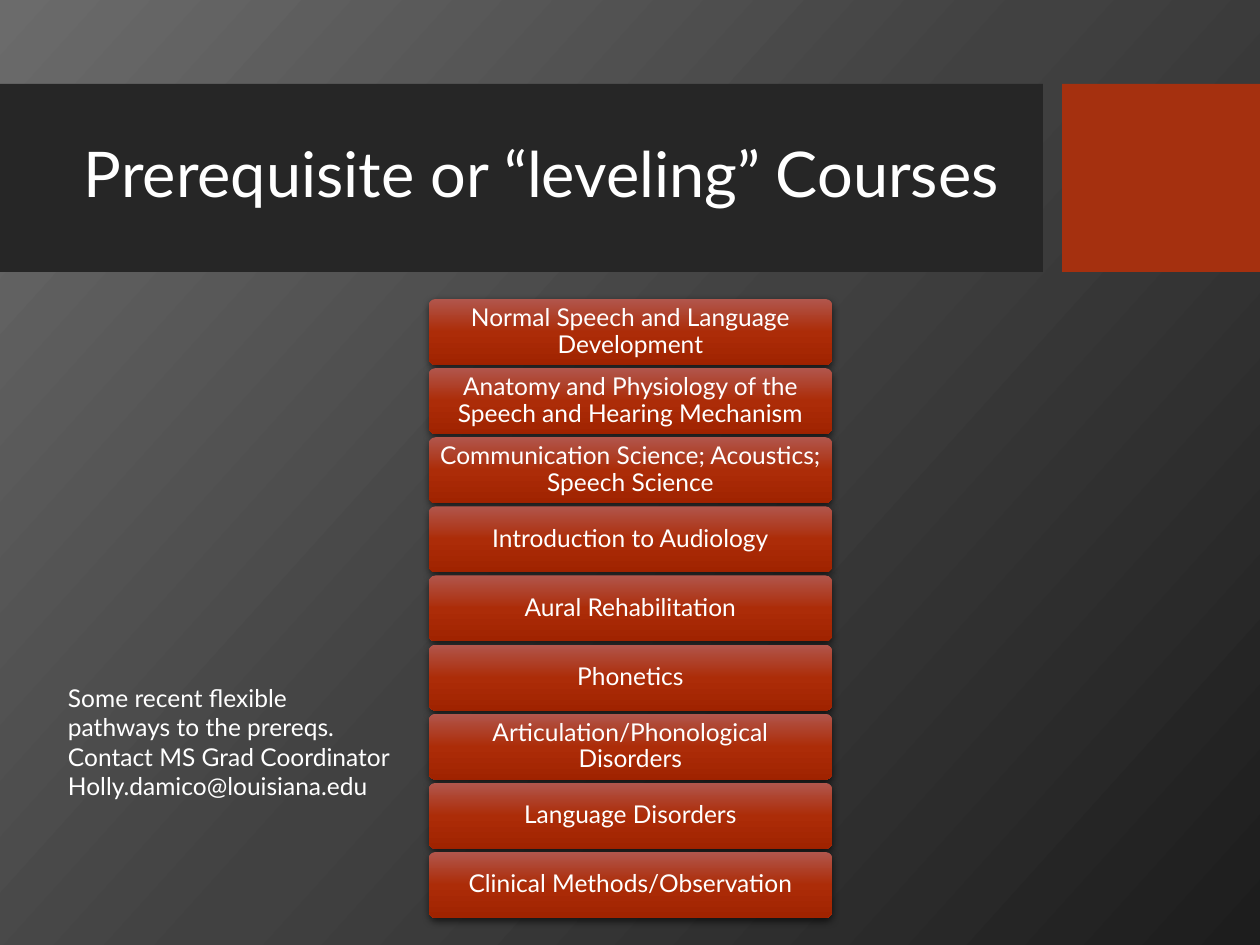
from copy import deepcopy
from lxml.etree import SubElement
from pptx import Presentation
from pptx.dml.color import RGBColor
from pptx.enum.shapes import MSO_SHAPE
from pptx.enum.text import MSO_ANCHOR, PP_ALIGN
from pptx.oxml.ns import qn
from pptx.util import Pt

SCALE = 914400 / 126
FONT = "Lato"
WHITE = "FFFFFF"
COURSES = [
    "Normal Speech and Language Development",
    "Anatomy and Physiology of the Speech and Hearing Mechanism",
    "Communication Science; Acoustics; Speech Science",
    "Introduction to Audiology",
    "Aural Rehabilitation",
    "Phonetics",
    "Articulation/Phonological Disorders",
    "Language Disorders",
    "Clinical Methods/Observation",
]
NOTE = [
    "Some recent flexible",
    "pathways to the prereqs. Contact MS Grad Coordinator",
    "Holly.damico@louisiana.edu",
]


def px(n):
    return round(n * SCALE)


def color(code):
    return RGBColor.from_string(code)


def shade(fill, owner, codes, angle):
    fill.gradient()
    stops = next(owner.iter(qn("a:gsLst")))
    stops.insert(1, deepcopy(stops[0]))
    for stop, code, place in zip(fill.gradient_stops, codes, (0, 0.5, 1)):
        stop.color.rgb = color(code)
        stop.position = place
    fill.gradient_angle = 360 - angle


def cast(shape):
    effects = shape.element.spPr.find(qn("a:effectLst"))
    shadow = SubElement(effects, qn("a:outerShdw"), blurRad=str(Pt(4.5)),
                        dist=str(Pt(1.5)), dir="5400000", algn="ctr", rotWithShape="0")
    black = SubElement(shadow, qn("a:srgbClr"), val="000000")
    SubElement(black, qn("a:alpha"), val="63000")


def block(slide, box, kind=MSO_SHAPE.RECTANGLE, fill=None):
    shape = slide.shapes.add_shape(kind, *map(px, box))
    shape.shadow.inherit = False
    shape.line.fill.background()
    if fill:
        shape.fill.solid()
        shape.fill.fore_color.rgb = color(fill)
    return shape


def write(shape, lines, size=14, align=PP_ALIGN.LEFT, anchor=MSO_ANCHOR.TOP,
          space=1.0, inset=(13, 6)):
    frame = shape.text_frame
    frame.word_wrap = True
    frame.vertical_anchor = anchor
    frame.margin_left = frame.margin_right = px(inset[0])
    frame.margin_top = frame.margin_bottom = px(inset[1])
    frame.text = "\n".join(lines)
    for para in frame.paragraphs:
        para.alignment = align
        para.line_spacing = space
        para.font.size = Pt(size)
        para.font.name = FONT
        para.font.color.rgb = color(WHITE)


def header(slide, x, y, wide, high):
    band, gap = 1043, 19
    block(slide, (x, y, band, high), fill="262626")
    block(slide, (x + band + gap, y, wide - band - gap, high), fill="A5300F")
    title = slide.shapes.add_textbox(*map(px, (x + 71, y + 19, 994, 149)))
    write(title, ["Prerequisite or “leveling” Courses"], size=36,
          anchor=MSO_ANCHOR.MIDDLE, space=0.9)


def stack(slide, x, y, wide, high):
    tall = 66
    step = (high - tall) / (len(COURSES) - 1)
    for i, course in enumerate(COURSES):
        card = block(slide, (x, y + i * step, wide, tall), MSO_SHAPE.ROUNDED_RECTANGLE)
        card.adjustments[0] = 0.1
        shade(card.fill, card.element, ("B1564C", "AC2C08", "A02300"), 90)
        cast(card)
        write(card, [course], align=PP_ALIGN.CENTER, anchor=MSO_ANCHOR.MIDDLE,
              space=0.9, inset=(8, 4))


def note(slide, x, y, wide, high):
    write(slide.shapes.add_textbox(*map(px, (x, y, wide, high))), NOTE)


def main():
    deck = Presentation()
    deck.slide_width, deck.slide_height = px(1260), px(945)
    slide = deck.slides.add_slide(deck.slide_layouts[6])
    shade(slide.background.fill, slide.element, ("6B6B6B", "414141", "1D1D1D"), 42)
    header(slide, 0, 84, 1260, 188)
    stack(slide, 429, 299, 403, 619)
    note(slide, 55, 677, 353, 161)
    deck.save("out.pptx")


if __name__ == "__main__":
    main()
